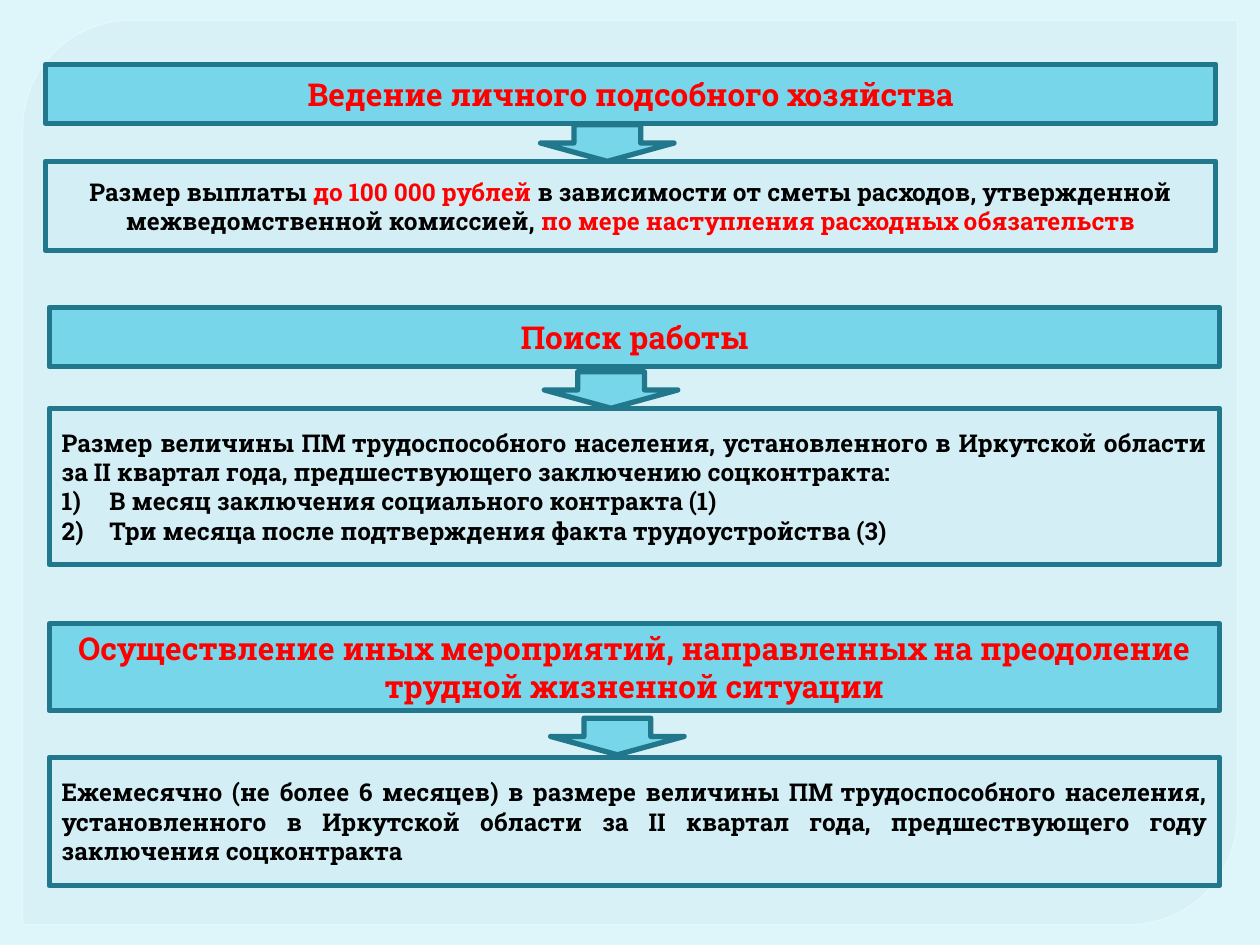
from lxml import etree
from pptx import Presentation
from pptx.dml.color import RGBColor
from pptx.enum.shapes import MSO_SHAPE
from pptx.enum.text import MSO_ANCHOR, PP_ALIGN
from pptx.oxml.ns import qn
from pptx.util import Inches, Pt

RECTANGLE = MSO_SHAPE.RECTANGLE
DOWN_ARROW = MSO_SHAPE.DOWN_ARROW
PANEL_SHAPE = MSO_SHAPE.ROUND_2_DIAG_RECTANGLE
CENTER, JUSTIFY = PP_ALIGN.CENTER, PP_ALIGN.JUSTIFY

BACKGROUND = RGBColor(0xDE, 0xF5, 0xFA)
PANEL = RGBColor(0xD4, 0xEF, 0xF5)
PANEL_EDGE = RGBColor(0xE2, 0xFA, 0xFF)
HEADING_FILL = RGBColor(0x78, 0xD6, 0xEA)
DETAIL_FILL = RGBColor(0xD3, 0xEE, 0xF5)
EDGE = RGBColor(0x21, 0x78, 0x8D)
RED = RGBColor(0xFF, 0x00, 0x00)
BLACK = RGBColor(0x00, 0x00, 0x00)

FONT = "Roboto Slab"
BOX_WIDTH = 9.29
ARROW_WIDTH, ARROW_HEIGHT = 1.06, 0.29
NUMBER_INDENT = 0.38

# Each section: left edge, heading (top, height, text), arrow (left, top),
# detail (top, height, alignment, paragraphs of (text, colour) runs, numbered items).
SECTIONS = [
    (0.36,
     (0.51, 0.47, "Ведение личного подсобного хозяйства"),
     (4.29, 0.99),
     (1.28, 0.71, CENTER,
      [("Размер выплаты ", BLACK),
       ("до 100 000 рублей ", RED),
       ("в зависимости от сметы расходов, утвержденной межведомственной комиссией, ", BLACK),
       ("по мере наступления расходных обязательств", RED)],
      [])),
    (0.39,
     (2.44, 0.47, "Поиск работы"),
     (4.32, 2.95),
     (3.24, 1.24, JUSTIFY,
      [("Размер величины ПМ трудоспособного населения, установленного в Иркутской "
        "области за II квартал года, предшествующего заключению соцконтракта:", BLACK)],
      ["В месяц заключения социального контракта (1)",
       "Три месяца после подтверждения факта трудоустройства (3)"])),
    (0.39,
     (4.95, 0.69, "Осуществление иных мероприятий, направленных на преодоление "
                  "трудной жизненной ситуации"),
     (4.37, 5.7),
     (6.01, 1.02, JUSTIFY,
      [("Ежемесячно (не более 6 месяцев) в размере величины ПМ трудоспособного населения, "
        "установленного в Иркутской области за II квартал года, предшествующего году "
        "заключения соцконтракта", BLACK)],
      [])),
]


def add_shape(slide, kind, left, top, width, height, fill, edge=EDGE, edge_width=3):
    shape = slide.shapes.add_shape(
        kind, Inches(left), Inches(top), Inches(width), Inches(height))
    shape.shadow.inherit = False
    shape.fill.solid()
    shape.fill.fore_color.rgb = fill
    shape.line.color.rgb = edge
    shape.line.width = Pt(edge_width)
    return shape


def set_opacity(solid_fill, percent):
    color = solid_fill.find(qn("a:srgbClr"))
    etree.SubElement(color, qn("a:alpha")).set("val", str(percent * 1000))


def add_panel(slide):
    panel = add_shape(slide, PANEL_SHAPE, 0.18, 0.16, 9.64, 7.18, PANEL, PANEL_EDGE, 0.87)
    panel.adjustments[0] = 0.12
    properties = panel._element.spPr
    set_opacity(properties.find(qn("a:solidFill")), 65)
    set_opacity(properties.find(qn("a:ln")).find(qn("a:solidFill")), 88)


def write_paragraph(paragraph, runs, size, alignment):
    paragraph.alignment = alignment
    paragraph.font.name = FONT
    paragraph.font.size = Pt(size)
    paragraph.font.bold = True
    for text, color in runs:
        run = paragraph.add_run()
        run.text = text
        run.font.color.rgb = color


def number_paragraph(paragraph):
    properties = paragraph._p.get_or_add_pPr()
    properties.set("marL", str(Inches(NUMBER_INDENT)))
    properties.set("indent", str(-Inches(NUMBER_INDENT)))
    numbering = etree.Element(qn("a:buAutoNum"), type="arabicParenR")
    properties.insert(0, numbering)


def add_box(slide, left, top, height, fill, runs, size, alignment, items=()):
    box = add_shape(slide, RECTANGLE, left, top, BOX_WIDTH, height, fill)
    frame = box.text_frame
    frame.word_wrap = True
    frame.vertical_anchor = MSO_ANCHOR.MIDDLE
    write_paragraph(frame.paragraphs[0], runs, size, alignment)
    for item in items:
        paragraph = frame.add_paragraph()
        write_paragraph(paragraph, [(item, BLACK)], size, alignment)
        number_paragraph(paragraph)


def add_section(slide, left, heading, arrow, detail):
    top, height, title = heading
    add_box(slide, left, top, height, HEADING_FILL, [(title, RED)], 18, CENTER)
    top, height, alignment, runs, items = detail
    add_box(slide, left, top, height, DETAIL_FILL, runs, 14, alignment, items)
    add_shape(slide, DOWN_ARROW, *arrow, ARROW_WIDTH, ARROW_HEIGHT, HEADING_FILL)


def main():
    presentation = Presentation()
    presentation.slide_width = Inches(10)
    presentation.slide_height = Inches(7.5)
    slide = presentation.slides.add_slide(presentation.slide_layouts[6])
    slide.background.fill.solid()
    slide.background.fill.fore_color.rgb = BACKGROUND
    add_panel(slide)
    for section in SECTIONS:
        add_section(slide, *section)
    presentation.save("out.pptx")


if __name__ == "__main__":
    main()
